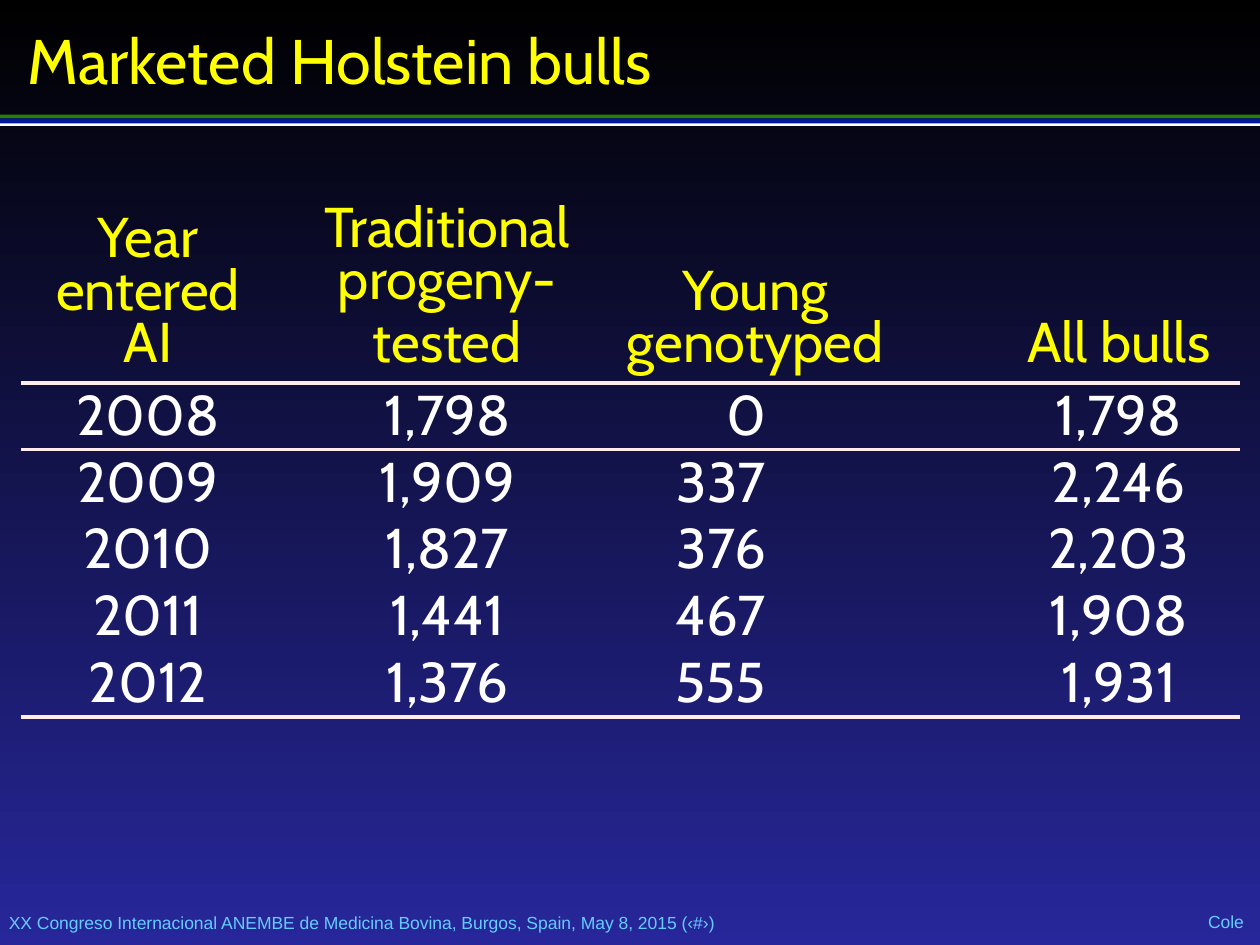
from lxml.etree import SubElement
from pptx import Presentation
from pptx.dml.color import RGBColor
from pptx.enum.shapes import MSO_SHAPE
from pptx.enum.text import MSO_ANCHOR as ANCHOR, PP_ALIGN as ALIGN
from pptx.oxml.ns import qn
from pptx.util import Inches, Pt

COLORS = {
    "black": "000000", "navy": "27279B", "yellow": "FFFF00", "white": "FFFFFF",
    "sky": "66CCFF", "green": "2A7E00", "blue": "001799", "rule": "FFEBEB",
}
PLAIN_TABLE = "{2D5ABB26-0587-4C30-8999-92F81FD0307C}"


def rgb(name):
    return RGBColor.from_string(COLORS[name])


def write(frame, text, *, size, color, font="Cabin", align=ALIGN.LEFT,
          anchor=ANCHOR.MIDDLE, margins=(0, 0, 0, 0), wrap=True, **spacing):
    """Fill a text frame or table cell; each line of text is a paragraph."""
    frame.vertical_anchor = anchor
    (frame.margin_left, frame.margin_top,
     frame.margin_right, frame.margin_bottom) = map(Inches, margins)
    body = getattr(frame, "text_frame", frame)
    body.word_wrap = wrap
    body.text = text
    for paragraph in body.paragraphs:
        paragraph.alignment = align
        for name, points in spacing.items():
            setattr(paragraph, name, Pt(points))
        run_font = paragraph.runs[0].font
        run_font.name, run_font.size = font, Pt(size)
        run_font.color.rgb = rgb(color)


prs = Presentation()
prs.slide_width, prs.slide_height = Inches(10), Inches(7.5)
slide = prs.slides.add_slide(prs.slide_layouts[6])

backdrop = slide.background.fill
backdrop.gradient()
backdrop.gradient_angle = 270
for stop, color in zip(backdrop.gradient_stops, ("black", "navy")):
    stop.color.rgb = rgb(color)

# Stripes under the title
for top, height, color in ((0.91, 0.03, "green"), (0.97, 0.03, "white"),
                           (0.94, 0.04, "blue")):
    stripe = slide.shapes.add_shape(MSO_SHAPE.RECTANGLE, 0, Inches(top),
                                    prs.slide_width, Inches(height))
    stripe.shadow.inherit = False
    stripe.fill.solid()
    stripe.fill.fore_color.rgb = rgb(color)
    stripe.line.fill.background()

# Title and footer
small = dict(size=10, color="sky", font="Arial", space_before=6)
for box, text, style in (
    ((0.17, 0.15, 9, 0.64), "Marketed Holstein bulls",
     dict(size=36, color="yellow", margins=(0.05,) * 4)),
    ((0.07, 7.24, 8.09, 0.17),
     "XX Congreso Internacional ANEMBE de Medicina Bovina, Burgos, Spain, "
     "May 8, 2015 (‹#›)", small),
    ((9.58, 7.24, 0.3, 0.15), "Cole",
     dict(small, align=ALIGN.CENTER, wrap=False)),
):
    textbox = slide.shapes.add_textbox(*map(Inches, box))
    write(textbox.text_frame, text, **style)

# Table of bulls
headers = ("Year entered AI", "Traditional progeny-\ntested",
           "Young genotyped", "All bulls")
bulls = (
    ("2008", "1,798", "0", "1,798"),
    ("2009", "1,909", "337", "2,246"),
    ("2010", "1,827", "376", "2,203"),
    ("2011", "1,441", "467", "1,908"),
    ("2012", "1,376", "555", "1,931"),
)
column_widths = (2.16, 2.34, 3.25, 1.92)
header_insets = (0.25, 0, 0.7, 0.1)
value_insets = (0.25, 0, 1.84, 0.1)
value_aligns = (ALIGN.CENTER, ALIGN.CENTER, ALIGN.RIGHT, ALIGN.CENTER)
row_heights = [1.39] + [0.53] * len(bulls)

table = slide.shapes.add_table(
    len(row_heights), len(column_widths), Inches(0.17), Inches(1.65),
    Inches(sum(column_widths)), Inches(sum(row_heights))).table
table.first_row = table.horz_banding = False
table._tbl.tblPr.find(qn("a:tableStyleId")).text = PLAIN_TABLE
for column, width in zip(table.columns, column_widths):
    column.width = Inches(width)
for row, height in zip(table.rows, row_heights):
    row.height = Inches(height)

ruled_below = {0: "a:lnB", 1: "a:lnT", len(bulls): "a:lnB"}
for r, texts in enumerate((headers, *bulls)):
    for c, text in enumerate(texts):
        cell = table.cell(r, c)
        if r == 0:
            write(cell, text, size=32, color="yellow", align=ALIGN.CENTER,
                  anchor=ANCHOR.BOTTOM, line_spacing=30, space_after=6,
                  margins=(0.1, 0, header_insets[c], 0.05))
        else:
            write(cell, text, size=32, color="white", align=value_aligns[c],
                  anchor=ANCHOR.TOP, line_spacing=38,
                  margins=(0.1, 0, value_insets[c], 0))
        if r in ruled_below:
            edge = SubElement(cell._tc.get_or_add_tcPr(), qn(ruled_below[r]),
                              w=str(Pt(2.25)))
            paint = SubElement(edge, qn("a:solidFill"))
            SubElement(paint, qn("a:srgbClr"), val=COLORS["rule"])
        cell.fill.background()

prs.save("out.pptx")
